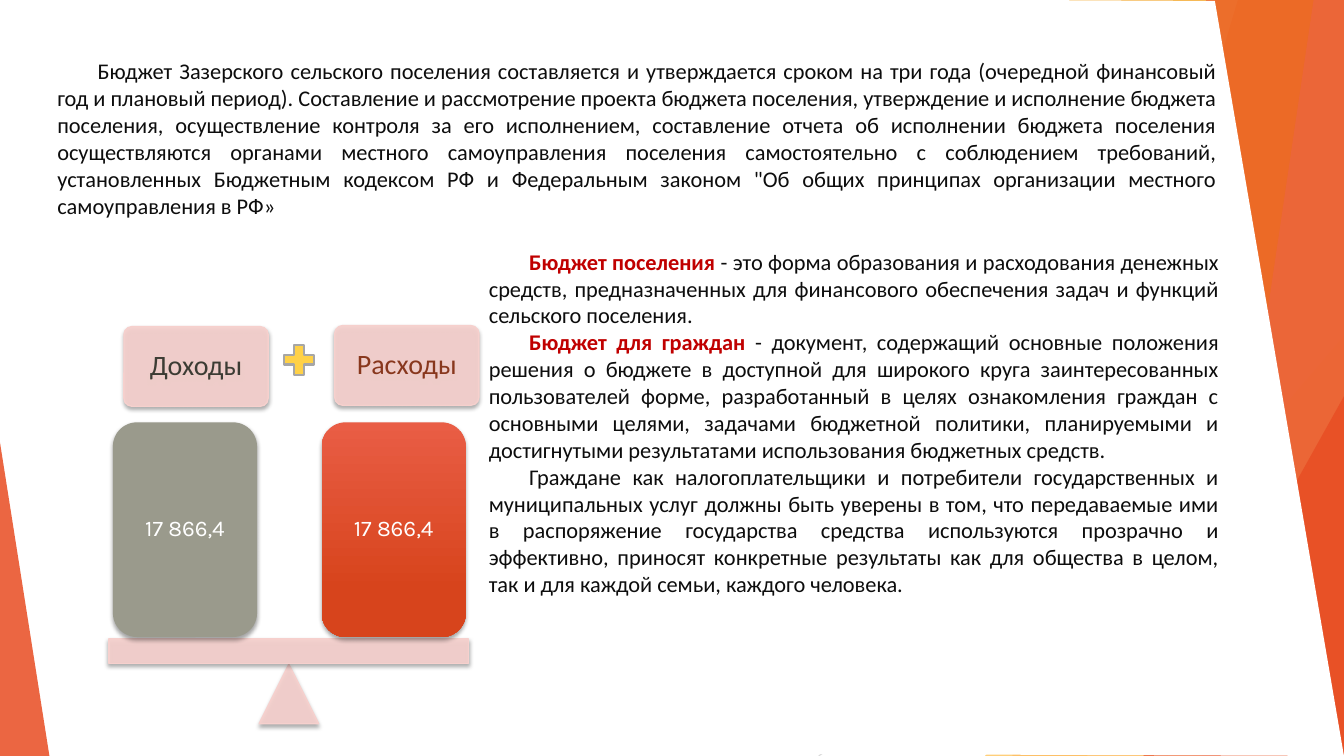
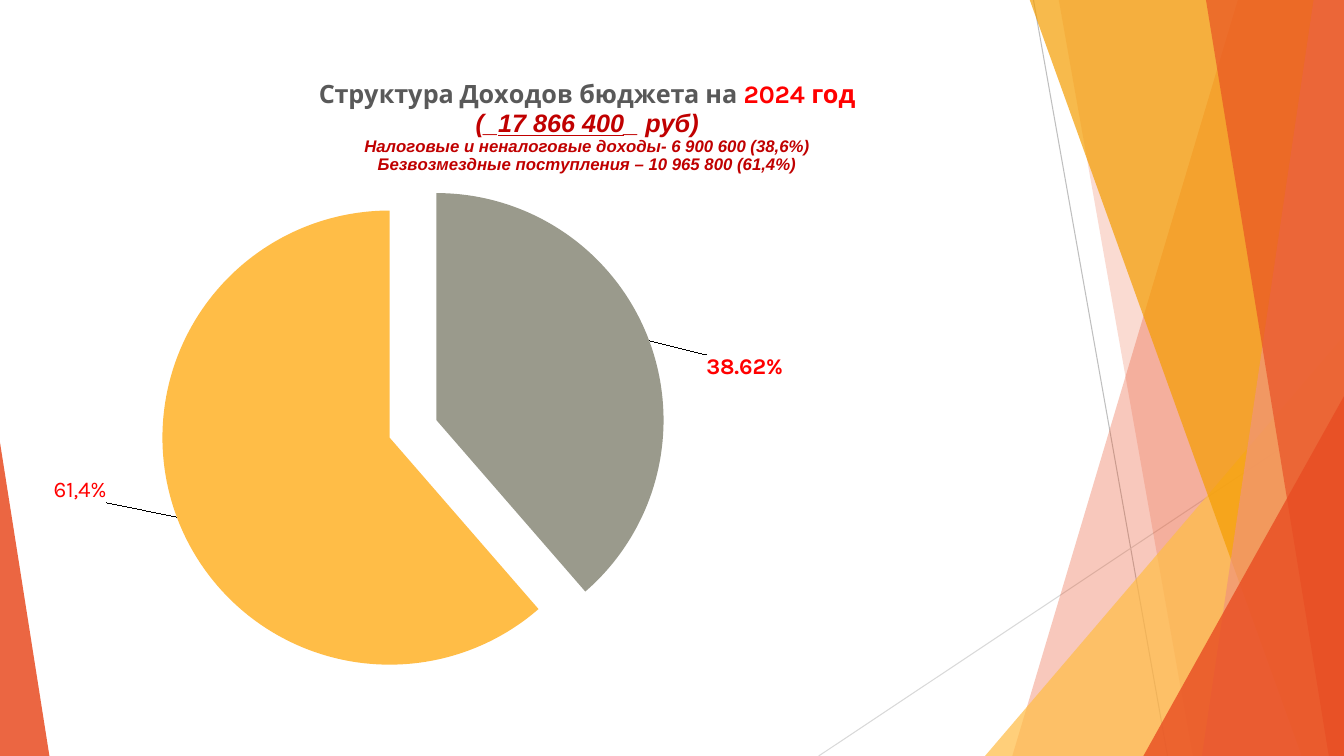
import dataclasses

import lxml.etree
import pptx
import pptx.chart.data
import pptx.dml.color
import pptx.enum.chart
import pptx.enum.shapes
import pptx.enum.text
import pptx.oxml.ns
import pptx.util

Inches = pptx.util.Inches
Pt = pptx.util.Pt
SHAPES = pptx.enum.shapes.MSO_SHAPE
ALIGN = pptx.enum.text.PP_ALIGN
qn = pptx.oxml.ns.qn


@dataclasses.dataclass(frozen=True)
class Theme:
    body_font: str = "Calibri"
    number_font: str = "Karla"
    title_font: str = "Arial"
    body_size: int = 16
    label_size: int = 20
    title_size: int = 18
    subtitle_size: int = 12
    white: str = "FFFFFF"
    ink: str = "0D0D0D"
    term: str = "C00000"
    red: str = "FF0000"
    title_gray: str = "595959"
    pink: str = "F6D0CD"
    sage: str = "9A9A8C"
    orange: str = "E84C22"
    salmon: str = "F1947A"
    amber: str = "FFBD47"
    gold: str = "F49D00"


THEME = Theme()

BACKDROP_LINES = [
    ((10.25, 0), (11.58, 7.5), "BFBFBF"),
    ((13.33, 4.03), (8.12, 7.5), "D9D9D9"),
]
BACKDROP_PANELS = [
    ("band", (12.28, 10.04), THEME.orange, 30),
    ("band", (10.5, 11.83), THEME.orange, 20),
    ("corner", (9.77, 3.33, 3.56, 4.17, 1), THEME.amber, 72),
    ("band", (10.21, 12.91), THEME.gold, 70),
    ("band", (13.03, 11.92), THEME.salmon, 70),
    ("band", (11.96, 13.18), THEME.orange, 65),
    ("corner", (11.34, 3.93, 1.99, 3.57, 1), THEME.orange, 80),
    ("corner", (0, 4.39, 0.49, 3.11, 0), THEME.orange, 85),
]
WHITE_COVER = [(12.05, 0.01), (13.33, 7.5), (7.97, 7.48), (10.54, 5.6), (10.81, 4.09), (10.01, 0)]

INTRO = [
    ("", "Бюджет Зазерского сельского поселения составляется и утверждается сроком на три года "
         "(очередной финансовый год и плановый период). Составление и рассмотрение проекта бюджета "
         "поселения, утверждение и исполнение бюджета поселения, осуществление контроля за его "
         "исполнением, составление отчета об исполнении бюджета поселения осуществляются органами "
         "местного самоуправления поселения самостоятельно с соблюдением требований, установленных "
         "Бюджетным кодексом РФ и Федеральным законом \"Об общих принципах организации местного "
         "самоуправления в РФ»"),
]
DEFINITIONS = [
    ("Бюджет поселения ",
     "- это форма образования и расходования денежных средств, предназначенных для финансового "
     "обеспечения задач и функций сельского поселения."),
    ("Бюджет для граждан ",
     "- документ, содержащий основные положения решения о бюджете в доступной для широкого круга "
     "заинтересованных пользователей форме, разработанный в целях ознакомления граждан с основными "
     "целями, задачами бюджетной политики, планируемыми и достигнутыми результатами использования "
     "бюджетных средств."),
    ("",
     "Граждане как налогоплательщики и потребители государственных и муниципальных услуг должны быть "
     "уверены в том, что передаваемые ими в распоряжение государства средства используются прозрачно "
     "и эффективно, приносят конкретные результаты как для общества в целом, так и для каждой семьи, "
     "каждого человека."),
]
SCALE_SIDES = [
    {"name": "Доходы", "name_color": "3C3C34", "name_at": (1.23, 3.24),
     "amount": "17 866,4", "weight_left": 1.12, "fill": [THEME.sage]},
    {"name": "Расходы", "name_color": "88371D", "name_at": (3.32, 3.23),
     "amount": "17 866,4", "weight_left": 3.19, "fill": ["E95D45", "D7441C"]},
]
SCALE_PARTS = [
    (SHAPES.ISOSCELES_TRIANGLE, (2.57, 6.59, 0.59, 0.59)),
    (SHAPES.RECTANGLE, (1.08, 6.34, 3.57, 0.24)),
]

TITLE_LINE = dict(size=THEME.title_size, font=THEME.title_font, color=THEME.term, bold=True, italic=True)
DETAIL_LINE = dict(TITLE_LINE, size=THEME.subtitle_size)
HEADING = dict(size=THEME.title_size, font=THEME.number_font, color=THEME.title_gray, bold=True)
CHART_TITLE = [
    [("Структура Доходов бюджета на ", HEADING), ("2024 год", dict(HEADING, color=THEME.red))],
    [("(_", TITLE_LINE), ("17 866 400", dict(TITLE_LINE, underline=True)), ("_ руб)", TITLE_LINE)],
    [("Налоговые и неналоговые доходы- 6 900 600 (38,6%)", DETAIL_LINE)],
    [("Безвозмездные поступления – 10 965 800 (61,4%)", DETAIL_LINE)],
]
INCOME = [
    {"name": "Налоговые и неналоговые доходы", "share": 38.62, "color": THEME.sage,
     "label": None, "bold": True, "shift": (0.04, 0.06)},
    {"name": "Безвозмездные поступления", "share": 61.38, "color": THEME.amber,
     "label": "61,4%", "bold": False, "shift": (-0.05, -0.06)},
]


def rgb(color):
    return pptx.dml.color.RGBColor.from_string(color)


def box(*lengths):
    return [Inches(length) for length in lengths]


def child(parent, tag, **attributes):
    return lxml.etree.SubElement(parent, qn(tag), {key: str(value) for key, value in attributes.items()})


def fade(color_format_parent, opacity):
    for color in color_format_parent.iter(qn("a:srgbClr")):
        child(color, "a:alpha", val=opacity * 1000)


def style_font(font, size, font_name, color, bold=False, italic=False, underline=False):
    font.size, font.name = Pt(size), font_name
    font.bold, font.italic, font.underline = bold, italic, underline
    font.color.rgb = rgb(color)


def add_run(paragraph, text, size, font, color, **emphasis):
    run = paragraph.add_run()
    run.text = text
    style_font(run.font, size, font, color, **emphasis)


def paint(shape, color, opacity=100):
    shape.shadow.inherit = False
    shape.fill.solid()
    shape.fill.fore_color.rgb = rgb(color)
    shape.line.fill.background()
    if opacity < 100:
        fade(shape.fill._xPr, opacity)


def cast_shadow(shape):
    effects = shape._element.spPr.find(qn("a:effectLst"))
    shadow = child(effects, "a:outerShdw", blurRad=Pt(3), dist=Pt(2), dir=5400000, rotWithShape=0)
    child(child(shadow, "a:srgbClr", val="000000"), "a:alpha", val=35000)


def add_outline(slide, points):
    corners = [tuple(box(*point)) for point in points]
    builder = slide.shapes.build_freeform(*corners[0], scale=1.0)
    builder.add_line_segments(corners[1:], close=True)
    return builder.convert_to_shape()


def add_backdrop(slide):
    for start, end, color in BACKDROP_LINES:
        line = slide.shapes.add_connector(
            pptx.enum.shapes.MSO_CONNECTOR.STRAIGHT, *box(*start), *box(*end))
        line.line.color.rgb = rgb(color)
        line.line.width = Pt(0.75)
        child(line._element.spPr, "a:effectLst")
    for kind, geometry, color, opacity in BACKDROP_PANELS:
        if kind == "band":
            top_left, bottom_left = geometry
            panel = add_outline(
                slide, [(top_left, -0.01), (13.33, -0.01), (13.33, 7.5), (bottom_left, 7.5)])
        else:
            *place, apex = geometry
            panel = slide.shapes.add_shape(SHAPES.ISOSCELES_TRIANGLE, *box(*place))
            panel.adjustments[0] = apex
        paint(panel, color, opacity)


def add_body(slide, place, paragraphs):
    frame = slide.shapes.add_textbox(*box(*place)).text_frame
    frame.word_wrap = True
    for index, (term, text) in enumerate(paragraphs):
        paragraph = frame.add_paragraph() if index else frame.paragraphs[0]
        paragraph.alignment = ALIGN.JUSTIFY
        paragraph._p.get_or_add_pPr().set("indent", str(Inches(0.4)))
        if term:
            add_run(paragraph, term, THEME.body_size, THEME.body_font, THEME.term, bold=True)
        add_run(paragraph, text, THEME.body_size, THEME.body_font, THEME.ink)


def center_text(shape, text, size, font, color):
    frame = shape.text_frame
    frame.vertical_anchor = pptx.enum.text.MSO_ANCHOR.MIDDLE
    paragraph = frame.paragraphs[0]
    paragraph.alignment = ALIGN.CENTER
    paragraph.line_spacing = 0.9
    add_run(paragraph, text, size, font, color)


def add_pink_part(slide, kind, place):
    part = slide.shapes.add_shape(kind, *box(*place))
    paint(part, THEME.pink, 90)
    part.line.color.rgb = rgb(THEME.pink)
    part.line.width = Pt(1)
    cast_shadow(part)
    return part


def add_scales(slide):
    for side in SCALE_SIDES:
        card = add_pink_part(slide, SHAPES.ROUNDED_RECTANGLE, (*side["name_at"], 1.43, 0.79))
        card.adjustments[0] = 0.1
        center_text(card, side["name"], THEME.label_size, THEME.body_font, side["name_color"])
    for kind, place in SCALE_PARTS:
        add_pink_part(slide, kind, place)
    for side in SCALE_SIDES:
        weight = slide.shapes.add_shape(
            SHAPES.ROUNDED_RECTANGLE, *box(side["weight_left"], 4.19, 1.43, 2.13))
        paint(weight, side["fill"][0])
        if len(side["fill"]) > 1:
            weight.fill.gradient()
            weight.fill.gradient_angle = 270
            for stop, color, position in zip(weight.fill.gradient_stops, side["fill"], (0, 0.78)):
                stop.color.rgb = rgb(color)
                stop.position = position
        cast_shadow(weight)
        center_text(weight, side["amount"], THEME.body_size, THEME.number_font, THEME.white)
    plus = slide.shapes.add_shape(SHAPES.MATH_PLUS, *box(2.76, 3.37, 0.41, 0.4))
    paint(plus, "FFD147")
    plus.line.color.rgb = rgb("A6A6A6")
    plus.line.width = Pt(1.5)


def set_layout(parent, index, **values):
    for layout in parent.findall(qn("c:layout")):
        parent.remove(layout)
    layout = lxml.etree.Element(qn("c:layout"))
    manual = child(layout, "c:manualLayout")
    for key, value in values.items():
        child(manual, "c:" + key, val=value)
    parent.insert(index, layout)


def add_income_chart(slide):
    data = pptx.chart.data.CategoryChartData()
    data.categories = [part["name"] for part in INCOME]
    data.add_series("Series 1", [part["share"] for part in INCOME])
    chart = slide.shapes.add_chart(
        pptx.enum.chart.XL_CHART_TYPE.PIE, *box(0.18, 0.47, 12.84, 6.87), data).chart
    chart.has_legend = False
    style_font(chart.font, 10, THEME.number_font, "000000")

    chart.has_title = True
    frame = chart.chart_title.text_frame
    for index, runs in enumerate(CHART_TITLE):
        paragraph = frame.add_paragraph() if index else frame.paragraphs[0]
        paragraph.alignment = ALIGN.CENTER
        for text, style in runs:
            add_run(paragraph, text, **style)
    set_layout(chart.chart_title._element, 1, xMode="edge", yMode="edge", x=0.23, y=0.04)
    set_layout(chart._chartSpace.chart.plotArea, 0, layoutTarget="inner", xMode="edge", yMode="edge",
               x=0.024, y=0.187, w=0.562, h=0.728)

    plot = chart.plots[0]
    plot.vary_by_categories = True
    series = plot.series[0]
    labels = series.data_labels
    labels.show_value, labels.show_percentage = False, True
    labels.number_format, labels.number_format_is_linked = "0.00%", False
    style_font(labels.font, THEME.body_size, THEME.number_font, THEME.red, bold=True)
    for index, part in enumerate(INCOME):
        point = series.points[index]
        point.format.fill.solid()
        point.format.fill.fore_color.rgb = rgb(part["color"])
        point.format.line.fill.background()
        label = point.data_label
        if part["label"]:
            add_run(label.text_frame.paragraphs[0], part["label"], THEME.body_size,
                    THEME.number_font, THEME.red, bold=part["bold"])
        else:
            style_font(label.font, THEME.body_size, THEME.number_font, THEME.red, bold=part["bold"])
        label.position = pptx.enum.chart.XL_LABEL_POSITION.OUTSIDE_END
        element = labels._element.findall(qn("c:dLbl"))[index]
        element.find(qn("c:showVal")).set("val", "0")
        element.find(qn("c:showPercent")).set("val", "1")
        shift_x, shift_y = part["shift"]
        set_layout(element, 1, x=shift_x, y=shift_y)
        if not part["label"]:
            number_format = lxml.etree.Element(qn("c:numFmt"), formatCode="0.00%", sourceLinked="0")
            element.insert(2, number_format)
    explosion = lxml.etree.Element(qn("c:explosion"), val="11")
    series._element.find(qn("c:dPt")).addprevious(explosion)


def main():
    presentation = pptx.Presentation()
    presentation.slide_width, presentation.slide_height = box(13.33, 7.5)
    budget_slide, income_slide = [
        presentation.slides.add_slide(presentation.slide_layouts[6]) for _ in range(2)]
    for slide in (budget_slide, income_slide):
        add_backdrop(slide)

    paint(add_outline(budget_slide, WHITE_COVER), THEME.white)
    add_body(budget_slide, (0.47, 0.52, 11.7, 1.75), INTRO)
    add_scales(budget_slide)
    add_body(budget_slide, (4.75, 2.41, 7.44, 3.6), DEFINITIONS)

    add_income_chart(income_slide)
    presentation.save("out.pptx")


if __name__ == "__main__":
    main()
